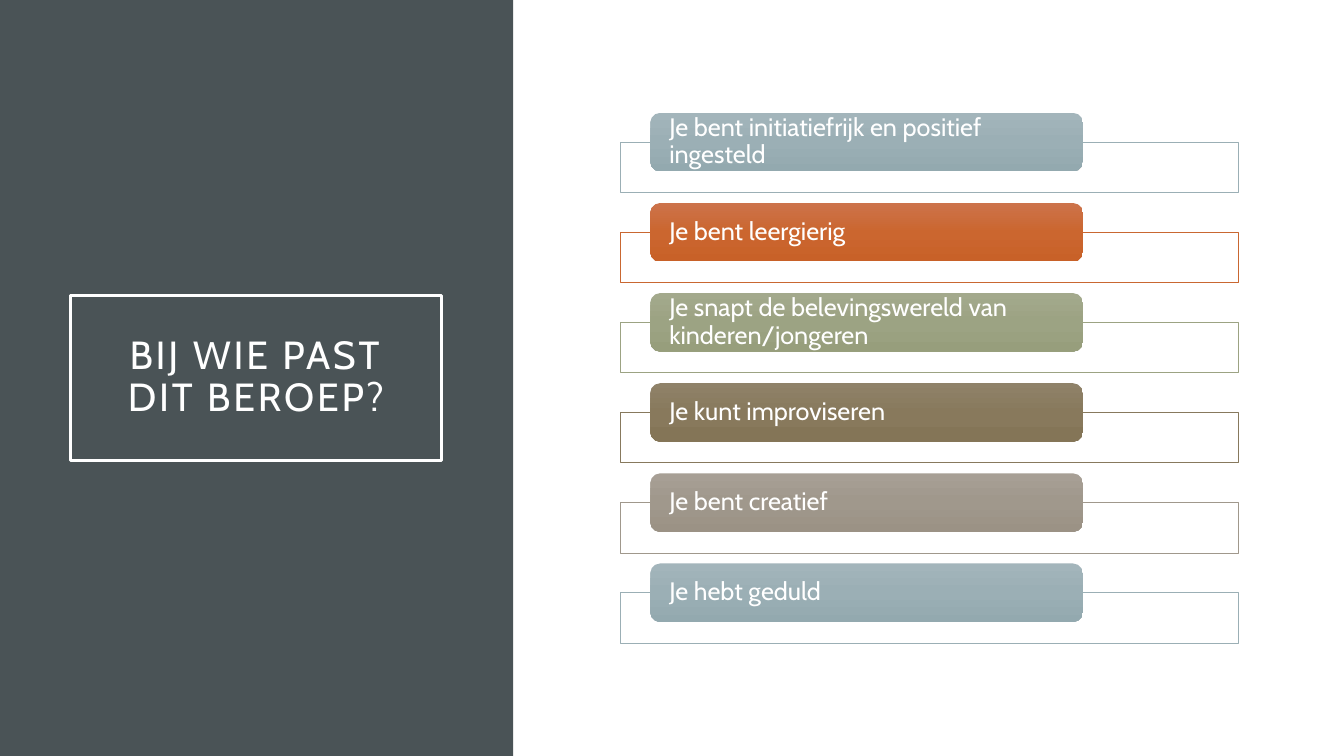
"""Build a slide with a framed title panel and six coloured trait bars."""
import copy

import pptx
import pptx.dml.color
import pptx.enum.shapes
import pptx.enum.text
import pptx.oxml.ns
import pptx.util
from lxml import etree

Inches = pptx.util.Inches
RGBColor = pptx.dml.color.RGBColor
Shape = pptx.enum.shapes.MSO_SHAPE
Align = pptx.enum.text.PP_ALIGN
qn = pptx.oxml.ns.qn

WHITE = RGBColor(0xFF, 0xFF, 0xFF)
SLATE = RGBColor(0x4A, 0x53, 0x56)


def palette(line, *stops):
    return RGBColor.from_string(line), [RGBColor.from_string(stop) for stop in stops]


BLUE = palette("9BAFB5", "A3B5BB", "9BAFB5", "93A9AF")
ORANGE = palette("C96731", "CC734B", "CB662F", "C86128")
GREEN = palette("9CA383", "A3A98C", "9CA383", "979E7C")
BROWN = palette("87795D", "8F8269", "88795C", "847557")
TAUPE = palette("A0988C", "A79F95", "A0988C", "9B9285")

TITLE = "BIJ WIE PAST DIT BEROEP?"
TRAITS = [
    ("Je bent initiatiefrijk en positief ingesteld", BLUE),
    ("Je bent leergierig", ORANGE),
    ("Je snapt de belevingswereld van kinderen/jongeren", GREEN),
    ("Je kunt improviseren", BROWN),
    ("Je bent creatief", TAUPE),
    ("Je hebt geduld", BLUE),
]
FIRST_TOP, LAST_TOP = 1.12, 5.59
FRAME_DROP = 0.29


def add_box(slide, kind, left, top, width, height, fill=None, line=None, line_width=0.5):
    shape = slide.shapes.add_shape(
        kind, Inches(left), Inches(top), Inches(width), Inches(height))
    shape.shadow.inherit = False
    if fill is None:
        shape.fill.background()
    else:
        shape.fill.solid()
        shape.fill.fore_color.rgb = fill
    if line is None:
        shape.line.fill.background()
    else:
        shape.line.color.rgb = line
        shape.line.width = pptx.util.Pt(line_width)
    return shape


def set_gradient(shape, colors):
    shape.fill.gradient()
    shape.fill.gradient_angle = 270
    stop_list = shape.element.spPr.find(".//" + qn("a:gsLst"))
    stop_list.append(copy.deepcopy(stop_list[0]))
    for index, (stop, color) in enumerate(zip(shape.fill.gradient_stops, colors)):
        stop.position = index / (len(colors) - 1)
        stop.color.rgb = color


def write_text(shape, text, size=18, align=Align.LEFT, insets=(0.16, 0), spacing=0):
    frame = shape.text_frame
    frame.word_wrap = True
    frame.vertical_anchor = pptx.enum.text.MSO_ANCHOR.MIDDLE
    frame.margin_left = frame.margin_right = Inches(insets[0])
    frame.margin_top = frame.margin_bottom = Inches(insets[1])
    paragraph = frame.paragraphs[0]
    paragraph.alignment = align
    paragraph.line_spacing = 0.9
    run = paragraph.add_run()
    run.text = text
    run.font.name = "Cabin"
    run.font.size = pptx.util.Pt(size)
    run.font.color.rgb = WHITE
    if spacing:
        run.font._element.set("spc", str(spacing * 100))


def main():
    presentation = pptx.Presentation()
    presentation.slide_width = Inches(13.33)
    presentation.slide_height = Inches(7.5)
    slide = presentation.slides.add_slide(presentation.slide_layouts[6])

    add_box(slide, Shape.RECTANGLE, 0, 0, 5.09, 7.5, fill=SLATE)
    title = add_box(slide, Shape.RECTANGLE, 0.7, 2.93, 3.68, 1.64,
                    line=WHITE, line_width=2.5)
    write_text(title, TITLE, size=28, align=Align.CENTER, insets=(0.2, 0.2), spacing=2)

    pitch = (LAST_TOP - FIRST_TOP) / (len(TRAITS) - 1)
    for index, (trait, (line, gradient)) in enumerate(TRAITS):
        top = FIRST_TOP + index * pitch
        frame = add_box(slide, Shape.RECTANGLE, 6.15, top + FRAME_DROP, 6.13, 0.5,
                        fill=WHITE, line=line)
        color = frame.element.spPr.find(qn("a:solidFill"))[0]
        etree.SubElement(color, qn("a:alpha"), val="90000")
        bar = add_box(slide, Shape.ROUNDED_RECTANGLE, 6.45, top, 4.29, 0.58)
        set_gradient(bar, gradient)
        write_text(bar, trait)

    presentation.save("out.pptx")


if __name__ == "__main__":
    main()
